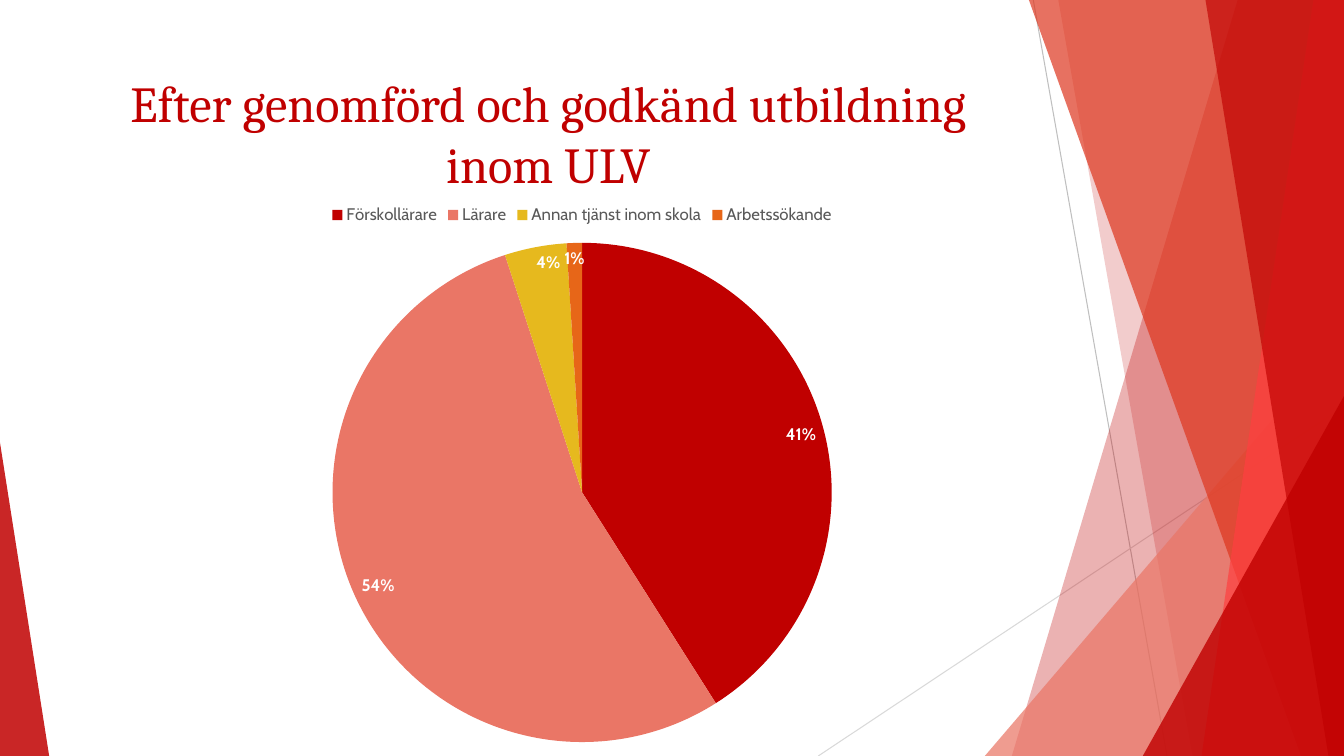
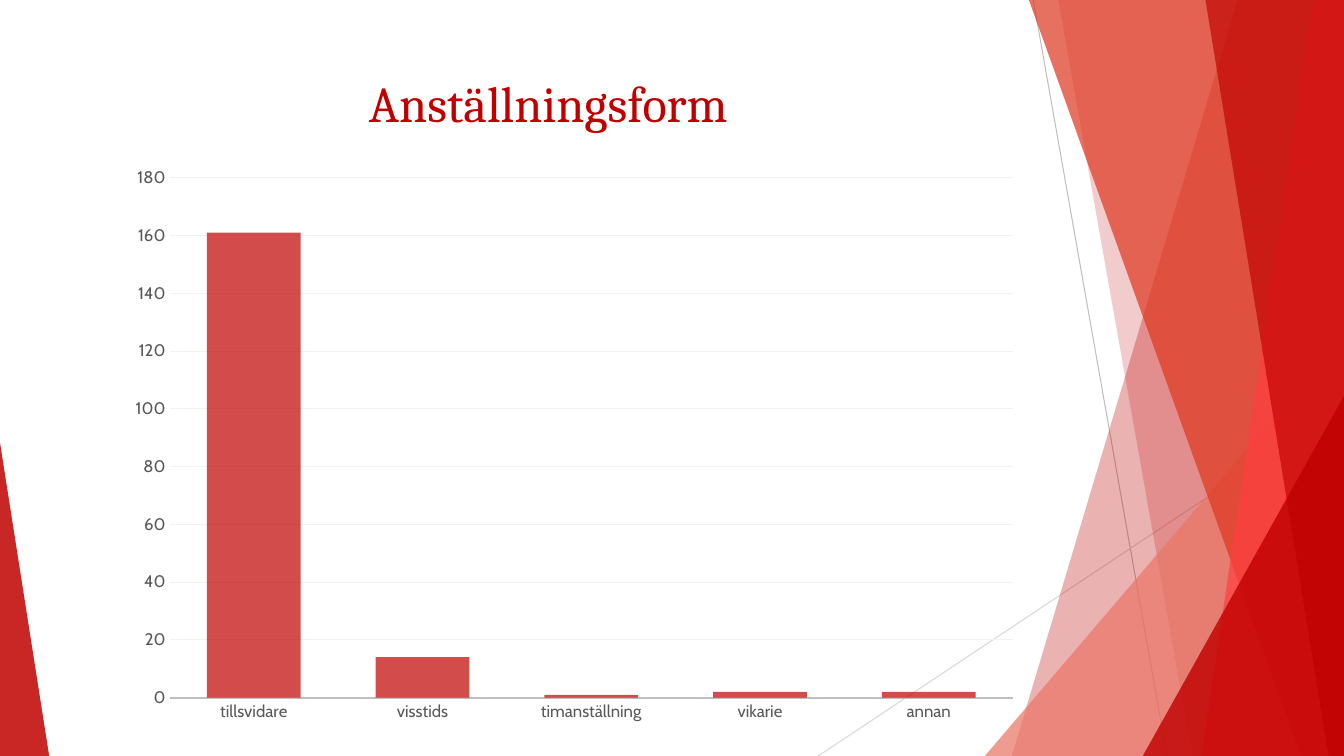
import pptx
import pptx.chart.data
import pptx.dml.color
import pptx.enum.chart
import pptx.enum.shapes
import pptx.enum.text
import pptx.oxml
import pptx.oxml.ns
import pptx.util

Cm, Pt = pptx.util.Cm, pptx.util.Pt
qn = pptx.oxml.ns.qn

WIDTH, HEIGHT = 33.87, 19.05
RED, CORAL, VERMILION, BRIGHT = "C00000", "EA7666", "DE361E", "FF4040"
GOLD, ORANGE = "E6B91E", "E76618"
WHITE, TEXT, AXIS, PALE, GRID = "FFFFFF", "595959", "BFBFBF", "D9D9D9", "F2F2F2"
TITLE_FONT, BODY_FONT = "Cambria", "Cabin"


def rgb(color):
    return pptx.dml.color.RGBColor.from_string(color)


def paint(fill, element, color, opacity=100):
    """Give a solid fill, and write its opacity (percent) into the element."""
    fill.solid()
    fill.fore_color.rgb = rgb(color)
    if opacity < 100:
        clr = next(element.iter(qn("a:srgbClr")))
        alpha = clr.makeelement(qn("a:alpha"), {"val": str(opacity * 1000)})
        clr.append(alpha)


def set_font(font, size, color, name=BODY_FONT, bold=False):
    font.size, font.name, font.bold = Pt(size), name, bold
    font.color.rgb = rgb(color)


class Deck:
    def __init__(self):
        self.prs = pptx.Presentation()
        self.prs.slide_width, self.prs.slide_height = Cm(WIDTH), Cm(HEIGHT)
        self.layout = self.prs.slide_layouts.get_by_name("Title Only")
        self.slide = None

    def add_slide(self, title):
        self.slide = self.prs.slides.add_slide(self.layout)
        sp = self.slide.shapes.title
        sp.left, sp.top, sp.width, sp.height = Cm(1.88), Cm(1.7), Cm(23.88), Cm(3.66)
        tf = sp.text_frame
        tf.text = title
        tf.word_wrap = True
        tf.auto_size = pptx.enum.text.MSO_AUTO_SIZE.NONE
        tf.vertical_anchor = pptx.enum.text.MSO_ANCHOR.TOP
        p = tf.paragraphs[0]
        p.alignment = pptx.enum.text.PP_ALIGN.CENTER
        set_font(p.runs[0].font, 36, RED, TITLE_FONT)

    def line(self, x1, y1, x2, y2, color):
        sp = self.slide.shapes.add_connector(
            pptx.enum.shapes.MSO_CONNECTOR.STRAIGHT, Cm(x1), Cm(y1), Cm(x2), Cm(y2))
        sp.line.color.rgb = rgb(color)
        sp.line.width = Pt(0.75)
        pr = sp.element.spPr
        pr.append(pr.makeelement(qn("a:effectLst"), {}))
        return sp

    def finish(self, sp, color, opacity):
        paint(sp.fill, sp.element, color, opacity)
        sp.line.fill.background()
        sp.shadow.inherit = False
        return sp

    def band(self, top_x, bottom_x, color, opacity):
        """Full-height band from a slanted left edge to the right slide edge."""
        builder = self.slide.shapes.build_freeform(Cm(top_x), 0)
        corners = [(WIDTH, 0), (WIDTH, HEIGHT), (bottom_x, HEIGHT)]
        builder.add_line_segments([(Cm(x), Cm(y)) for x, y in corners])
        return self.finish(builder.convert_to_shape(), color, opacity)

    def corner(self, left, right, top, apex, color, opacity):
        """Triangle on the bottom edge; apex is 0 (left) or 1 (right)."""
        sp = self.slide.shapes.add_shape(
            pptx.enum.shapes.MSO_SHAPE.ISOSCELES_TRIANGLE,
            Cm(left), Cm(top), Cm(right - left), Cm(HEIGHT - top))
        sp.adjustments[0] = apex
        return self.finish(sp, color, opacity)

    def decorate_layout(self):
        """Draw the facets on the current slide, then move them to its layout."""
        facets = [
            self.line(26.04, 0, 29.41, HEIGHT, AXIS),
            self.line(WIDTH, 10.24, 20.62, HEIGHT, PALE),
            self.band(31.19, 25.5, RED, 30),
            self.band(26.67, 30.05, RED, 20),
            self.corner(24.82, WIDTH, 8.46, 1, CORAL, 72),
            self.band(25.93, 32.79, VERMILION, 70),
            self.band(33.1, 30.28, BRIGHT, 70),
            self.band(30.38, 33.48, RED, 65),
            self.corner(28.8, WIDTH, 9.98, 1, RED, 80),
            self.corner(0, 1.24, 11.15, 0, RED, 85),
        ]
        for number, sp in enumerate(facets, 101):
            next(sp.element.iter(qn("p:cNvPr"))).set("id", str(number))
            self.layout.shapes.element.append(sp.element)

    def chart(self, kind, box, values):
        data = pptx.chart.data.CategoryChartData()
        data.categories = list(values)
        data.add_series("Series 1", list(values.values()))
        chart = self.slide.shapes.add_chart(kind, *map(Cm, box), data).chart
        chart.has_title = False
        chart.has_legend = False
        set_font(chart.font, 10, "000000")
        return chart

    def pie(self, box, values, colors):
        chart = self.chart(pptx.enum.chart.XL_CHART_TYPE.PIE, box, values)
        chart.has_legend = True
        chart.legend.position = pptx.enum.chart.XL_LEGEND_POSITION.TOP
        chart.legend.include_in_layout = False
        set_font(chart.legend.font, 12, TEXT)
        plot = chart.plots[0]
        plot.vary_by_categories = True
        for i, color in enumerate(colors):
            fill = plot.series[0].points[i].format.fill
            fill.solid()
            fill.fore_color.rgb = rgb(color)
        plot.has_data_labels = True
        labels = plot.data_labels
        labels.show_percentage, labels.show_value = True, False
        labels.number_format, labels.number_format_is_linked = "0%", False
        labels.position = pptx.enum.chart.XL_LABEL_POSITION.INSIDE_END
        set_font(labels.font, 12, WHITE, bold=True)

    def columns(self, box, values, top, step, inner):
        """Column chart; inner is the plot's x, y, w, h as shares of the chart."""
        chart = self.chart(pptx.enum.chart.XL_CHART_TYPE.COLUMN_CLUSTERED, box, values)
        plot = chart.plots[0]
        plot.vary_by_categories = False
        plot.gap_width, plot.overlap = 80, 25
        series = plot.series[0]
        paint(series.format.fill, series.format.element, RED, 70)
        cat, val = chart.category_axis, chart.value_axis
        for axis in (cat, val):
            axis.major_tick_mark = axis.minor_tick_mark = pptx.enum.chart.XL_TICK_MARK.NONE
            set_font(axis.tick_labels.font, 12, TEXT)
        cat.format.line.color.rgb = rgb(AXIS)
        cat.format.line.width = Pt(1.25)
        val.format.line.fill.background()
        val.minimum_scale, val.maximum_scale, val.major_unit = 0, top, step
        val.has_major_gridlines = True
        val.major_gridlines.format.line.color.rgb = rgb(GRID)
        val.major_gridlines.format.line.width = Pt(0.75)
        self.place_plot(chart, inner)

    def place_plot(self, chart, inner):
        area = next(chart.element.iter(qn("c:plotArea")))
        for old in area.findall(qn("c:layout")):
            area.remove(old)
        settings = [("layoutTarget", "inner"), ("xMode", "edge"), ("yMode", "edge")]
        settings += zip("xywh", inner)
        items = "".join(f'<c:{tag} val="{val}"/>' for tag, val in settings)
        area.insert(0, pptx.oxml.parse_xml(
            f'<c:layout {pptx.oxml.ns.nsdecls("c")}>'
            f'<c:manualLayout>{items}</c:manualLayout></c:layout>'))


def main():
    deck = Deck()
    deck.add_slide("Efter genomförd och godkänd utbildning inom ULV")
    deck.decorate_layout()
    deck.pie(
        (1.88, 4.88, 25.58, 14.17),
        {"Förskollärare": 41, "Lärare": 54, "Annan tjänst inom skola": 4, "Arbetssökande": 1},
        [RED, CORAL, GOLD, ORANGE])

    deck.add_slide("Anställningsform")
    deck.columns(
        (2.9, 2.92, 22.86, 15.6),
        {"tillsvidare": 161, "visstids": 14, "timanställning": 1, "vikarie": 2, "annan": 2},
        top=180, step=20, inner=(0.06, 0.1, 0.93, 0.84))
    deck.prs.save("out.pptx")


if __name__ == "__main__":
    main()
